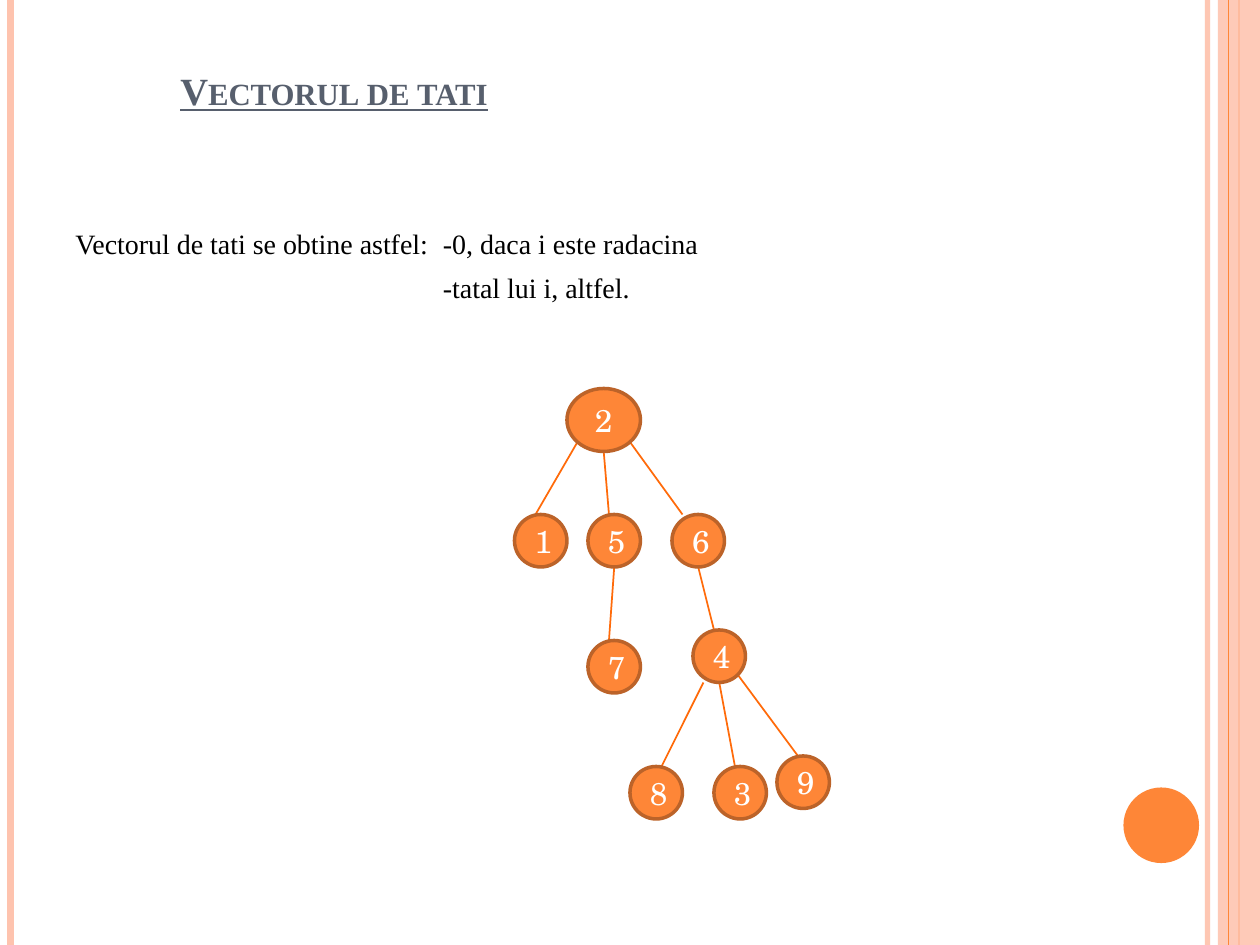
from lxml import etree
from pptx import Presentation
from pptx.dml.color import RGBColor
from pptx.enum.shapes import MSO_CONNECTOR, MSO_SHAPE
from pptx.enum.text import MSO_ANCHOR, PP_ALIGN
from pptx.oxml.ns import qn
from pptx.util import Pt

STRAIGHT = MSO_CONNECTOR.STRAIGHT
OVAL, RECTANGLE = MSO_SHAPE.OVAL, MSO_SHAPE.RECTANGLE
TOP, BOTTOM, MIDDLE = MSO_ANCHOR.TOP, MSO_ANCHOR.BOTTOM, MSO_ANCHOR.MIDDLE
CENTER = PP_ALIGN.CENTER

COLORS = {
    "peach": "FEC3AE",
    "orange": "FE8637",
    "outline": "BC6329",
    "edge": "FF6B0A",
    "title": "575F6D",
    "body": "000000",
    "white": "FFFFFF",
}
SERIF, SCHOOL = "Times New Roman", "TeX Gyre Schola"
WIDTH, HEIGHT = 720, 540
NODE = 30


class TreeSlide:
    """Holds the style and the current slide, and draws each kind of element."""

    def __init__(self, presentation):
        self.slide = presentation.slides.add_slide(presentation.slide_layouts[6])

    def color(self, name):
        return RGBColor.from_string(COLORS[name])

    def fade(self, fill, percent):
        color = fill._xPr.find(qn("a:solidFill"))[0]
        etree.SubElement(color, qn("a:alpha")).set("val", str(percent * 1000))

    def line(self, start, end, color, width, opacity=100):
        connector = self.slide.shapes.add_connector(
            STRAIGHT, *(Pt(value) for value in (*start, *end)))
        connector.line.color.rgb = self.color(color)
        connector.line.width = Pt(width)
        if opacity < 100:
            self.fade(connector.line.fill, opacity)
        etree.SubElement(connector._element.spPr, qn("a:effectLst"))

    def stripe(self, x, color, width, opacity=100):
        self.line((x, 0), (x, HEIGHT), color, width, opacity)

    def shape(self, kind, box, fill, opacity=100):
        shape = self.slide.shapes.add_shape(kind, *(Pt(value) for value in box))
        shape.shadow.inherit = False
        shape.fill.solid()
        shape.fill.fore_color.rgb = self.color(fill)
        if opacity < 100:
            self.fade(shape.fill, opacity)
        shape.line.fill.background()
        return shape

    def run(self, paragraph, text, font, size, color):
        run = paragraph.add_run()
        run.text = text
        run.font.name = font
        run.font.size = Pt(size)
        run.font.color.rgb = self.color(color)
        return run

    def node(self, label, left, top, width=NODE, height=NODE):
        shape = self.shape(OVAL, (left, top, width, height), "orange")
        shape.line.color.rgb = self.color("outline")
        shape.line.width = Pt(2)
        shape.text_frame.vertical_anchor = MIDDLE
        paragraph = shape.text_frame.paragraphs[0]
        paragraph.alignment = CENTER
        self.run(paragraph, label, SCHOOL, 18, "white")

    def text_frame(self, box, anchor):
        frame = self.slide.shapes.add_textbox(*(Pt(value) for value in box)).text_frame
        frame.word_wrap = True
        frame.vertical_anchor = anchor
        return frame

    def title(self, text, box):
        paragraph = self.text_frame(box, BOTTOM).paragraphs[0]
        run = self.run(paragraph, text, SERIF, 22, "title")
        run.font.bold = True
        run.font.underline = True
        run._r.get_or_add_rPr().set("cap", "small")

    def body(self, lines, box, tab):
        frame = self.text_frame(box, TOP)
        for index, text in enumerate(lines):
            paragraph = frame.add_paragraph() if index else frame.paragraphs[0]
            if index:
                paragraph.space_before = Pt(6)
            tabs = etree.SubElement(paragraph._p.get_or_add_pPr(), qn("a:tabLst"))
            stop = etree.SubElement(tabs, qn("a:tab"))
            stop.set("pos", str(Pt(tab)))
            stop.set("algn", "l")
            self.run(paragraph, text, SERIF, 16, "body")


def main():
    presentation = Presentation()
    presentation.slide_width, presentation.slide_height = Pt(WIDTH), Pt(HEIGHT)
    page = TreeSlide(presentation)

    page.stripe(690, "peach", 3, 93)
    page.stripe(6, "peach", 4.5)
    page.stripe(708, "orange", 1.5)
    page.shape(RECTANGLE, (696, 0, 24, HEIGHT), "peach", 87)
    page.stripe(702, "orange", 0.75)
    page.shape(OVAL, (642, 450, 43.2, 43.2), "orange")

    page.title("Vectorul de tati", (96, 24, 492, 44.4))
    page.body(
        ["Vectorul de tati se obtine astfel:\t-0, daca i este radacina",
         "\t-tatal lui i, altfel."],
        (36, 126, 588, 384), 210)

    edges = [
        ((330, 252.6), (306, 294)),
        ((345, 258), (348, 294)),
        ((360, 252.6), (390, 294)),
        ((351, 324), (348, 366)),
        ((399, 324), (408, 360)),
        ((402, 390), (378, 438)),
        ((411, 390), (420, 438)),
        ((421.6, 385.6), (456, 432)),
    ]
    for start, end in edges:
        page.line(start, end, "edge", 1)

    page.node("2", 324, 222, 42, 36)
    nodes = {
        "1": (294, 294), "5": (336, 294), "6": (384, 294),
        "7": (336, 366), "4": (396, 360),
        "8": (360, 438), "3": (408, 438), "9": (444, 432),
    }
    for label, position in nodes.items():
        page.node(label, *position)

    presentation.save("out.pptx")


if __name__ == "__main__":
    main()
